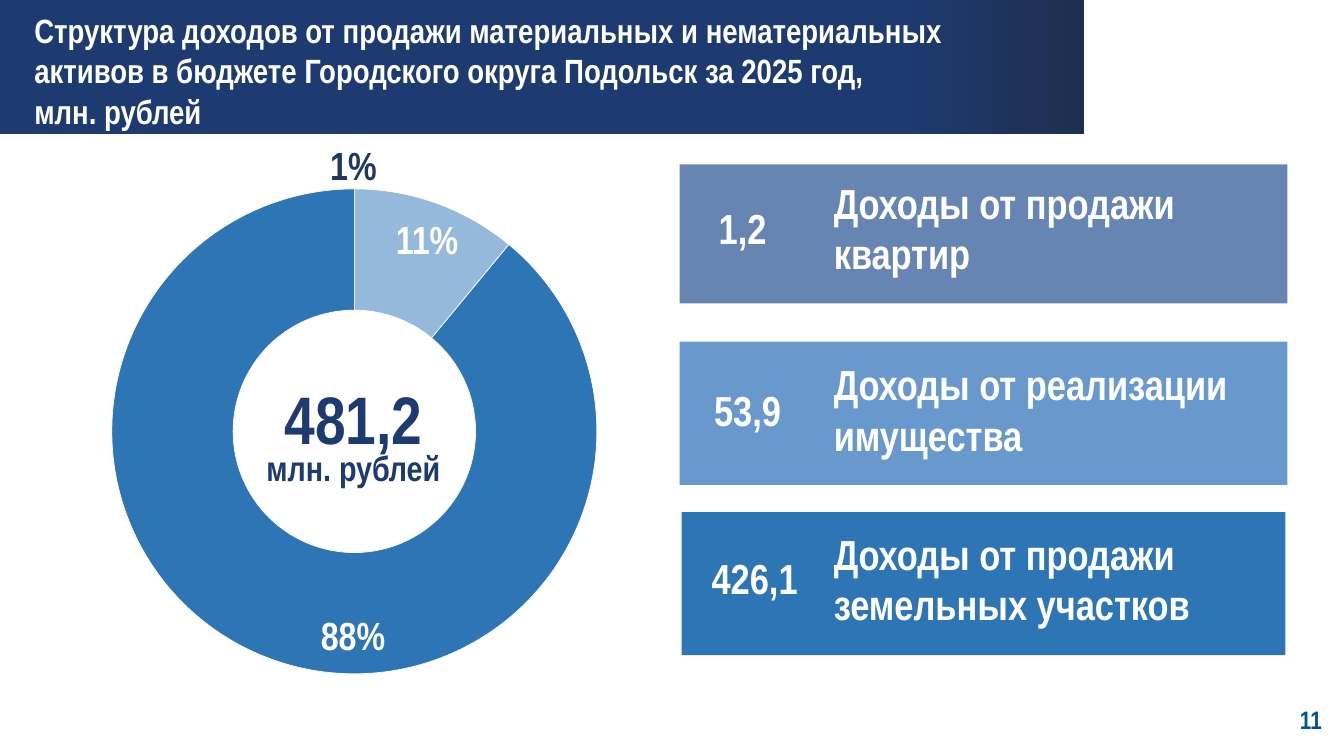
from dataclasses import dataclass

import lxml.etree
import pptx
import pptx.chart.data
import pptx.dml.color
import pptx.enum.chart
import pptx.enum.shapes
import pptx.enum.text
import pptx.oxml
import pptx.util

EMU_PER_PX = 9144
FONT = "Arial Narrow"
WHITE = "FFFFFF"
NAVY = "1D3B70"
PLOT_SHARE = 0.99
LEFT = pptx.enum.text.PP_ALIGN.LEFT
CENTER = pptx.enum.text.PP_ALIGN.CENTER
RIGHT = pptx.enum.text.PP_ALIGN.RIGHT


@dataclass(frozen=True)
class Box:
    left: int
    top: int
    width: int
    height: int

    def emu(self) -> tuple[int, ...]:
        return tuple(px(side) for side in (self.left, self.top, self.width, self.height))


@dataclass(frozen=True)
class Label:
    box: Box
    lines: tuple[str, ...]
    size: int
    color: str = WHITE
    align: pptx.enum.text.PP_ALIGN = CENTER
    wrap: bool = True


@dataclass(frozen=True)
class Income:
    amount: float
    name: str
    card: Box
    amount_box: Box
    name_box: Box
    card_color: str
    slice_color: str


LABELS = (
    Label(
        Box(29, 5, 921, 131),
        (
            "Структура доходов от продажи материальных и нематериальных",
            "активов в бюджете Городского округа Подольск за 2025 год,",
            "млн. рублей",
        ),
        24,
        align=LEFT,
    ),
    Label(Box(1282, 694, 34, 39), ("11",), 18, "005493", RIGHT, wrap=False),
    Label(Box(183, 369, 335, 91), ("481,2",), 48, NAVY),
    Label(Box(183, 438, 335, 52), ("млн. рублей",), 25, NAVY),
    Label(Box(383, 209, 81, 57), ("11%",), 28),
    Label(Box(299, 602, 102, 57), ("88%",), 28),
    Label(Box(310, 135, 81, 57), ("1%",), 28, "203864"),
)

INCOMES = (
    Income(1.2, "Доходы от продажи квартир", Box(674, 163, 603, 138),
           Box(669, 196, 135, 61), Box(822, 171, 460, 111), "6685B3", "5E86B8"),
    Income(53.9, "Доходы от реализации имущества", Box(674, 339, 603, 142),
           Box(674, 377, 135, 61), Box(822, 351, 500, 111), "6999CC", "94B9DA"),
    Income(426.1, "Доходы от продажи земельных участков", Box(676, 508, 599, 142),
           Box(681, 543, 135, 61), Box(822, 519, 484, 111), "2E75B6", "2E75B6"),
)


def px(length: int) -> int:
    return length * EMU_PER_PX


def rgb(color: str) -> pptx.dml.color.RGBColor:
    return pptx.dml.color.RGBColor.from_string(color)


def add_rectangle(slide: pptx.slide.Slide, box: Box) -> pptx.shapes.autoshape.Shape:
    shape = slide.shapes.add_shape(pptx.enum.shapes.MSO_SHAPE.RECTANGLE, *box.emu())
    shape.shadow.inherit = False
    shape.line.fill.background()
    return shape


def add_header(slide: pptx.slide.Slide) -> None:
    shape = add_rectangle(slide, Box(0, 0, 1075, 133))
    shape.rotation = 180
    shape.fill.gradient()
    shape.fill.gradient_angle = 0
    for stop, position, color in zip(shape.fill.gradient_stops, (0, 0.17), ("1F2E4F", NAVY)):
        stop.position = position
        stop.color.rgb = rgb(color)


def add_label(slide: pptx.slide.Slide, label: Label) -> None:
    frame = slide.shapes.add_textbox(*label.box.emu()).text_frame
    frame.word_wrap = label.wrap
    frame.auto_size = pptx.enum.text.MSO_AUTO_SIZE.SHAPE_TO_FIT_TEXT
    frame.margin_left = frame.margin_right = px(5)
    frame.margin_top = frame.margin_bottom = px(5)
    frame.text = "\n".join(label.lines)
    for paragraph in frame.paragraphs:
        paragraph.alignment = label.align
        paragraph.font.name = FONT
        paragraph.font.size = pptx.util.Pt(label.size)
        paragraph.font.bold = True
        paragraph.font.color.rgb = rgb(label.color)


def set_plot_layout(chart: pptx.chart.chart.Chart) -> None:
    plot_area = chart.element.find(".//" + pptx.oxml.ns.qn("c:plotArea"))
    layout = plot_area.find(pptx.oxml.ns.qn("c:layout"))
    if layout is None:
        layout = lxml.etree.Element(pptx.oxml.ns.qn("c:layout"))
        plot_area.insert(0, layout)
    manual = lxml.etree.SubElement(layout, pptx.oxml.ns.qn("c:manualLayout"))
    margin = (1 - PLOT_SHARE) / 2
    settings = {
        "layoutTarget": "inner", "xMode": "edge", "yMode": "edge",
        "x": margin, "y": margin, "w": PLOT_SHARE, "h": PLOT_SHARE,
    }
    for tag, value in settings.items():
        lxml.etree.SubElement(manual, pptx.oxml.ns.qn("c:" + tag)).set("val", str(value))


def add_doughnut(slide: pptx.slide.Slide) -> None:
    total = sum(income.amount for income in INCOMES)
    data = pptx.chart.data.CategoryChartData()
    data.categories = [str(number) for number in range(1, len(INCOMES) + 1)]
    data.add_series("Series 1", [round(100 * income.amount / total) for income in INCOMES])
    chart = slide.shapes.add_chart(
        pptx.enum.chart.XL_CHART_TYPE.DOUGHNUT, *Box(76, 185, 551, 486).emu(), data
    ).chart
    chart.has_legend = False
    chart.has_title = False
    chart.font.name = "Calibri"
    chart.font.size = pptx.util.Pt(10)
    chart.font.color.rgb = rgb(WHITE)
    plot = chart.plots[0]
    plot.vary_by_categories = True
    plot.has_data_labels = False
    chart.element.find(".//" + pptx.oxml.ns.qn("c:holeSize")).set("val", "70")
    for index, income in enumerate(INCOMES):
        point = plot.series[0].points[index]
        point.format.fill.solid()
        point.format.fill.fore_color.rgb = rgb(income.slice_color)
        point.format.line.color.rgb = rgb(WHITE)
        point.format.line.width = pptx.util.Pt(0.5)
    set_plot_layout(chart)


def add_income(slide: pptx.slide.Slide, income: Income) -> None:
    card = add_rectangle(slide, income.card)
    card.fill.solid()
    card.fill.fore_color.rgb = rgb(income.card_color)
    amount = str(income.amount).replace(".", ",")
    add_label(slide, Label(income.amount_box, (amount,), 30))
    add_label(slide, Label(income.name_box, (income.name,), 30, align=LEFT))


def main() -> None:
    presentation = pptx.Presentation()
    presentation.slide_width = px(1333)
    presentation.slide_height = px(750)
    slide = presentation.slides.add_slide(presentation.slide_layouts[6])
    add_header(slide)
    add_doughnut(slide)
    for label in LABELS:
        add_label(slide, label)
    for income in INCOMES:
        add_income(slide, income)
    presentation.save("out.pptx")


if __name__ == "__main__":
    main()
